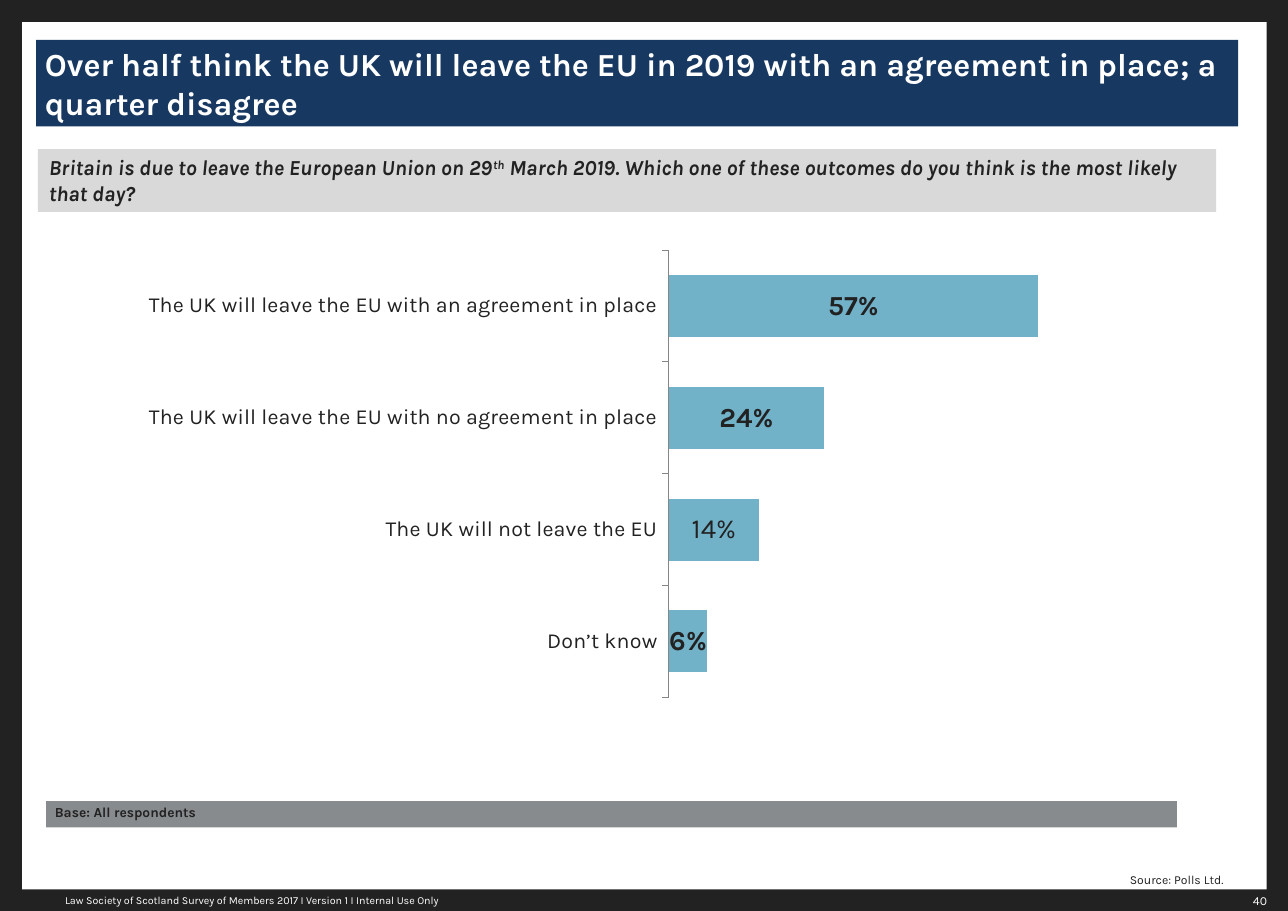
"""Build the survey slide on the expected outcome of leaving the EU."""
import pptx
import pptx.chart.data
import pptx.dml.color
import pptx.enum.chart
import pptx.enum.shapes
import pptx.enum.text
import pptx.oxml
import pptx.util

Pt = pptx.util.Pt
ANCHOR = pptx.enum.text.MSO_ANCHOR
ALIGN = pptx.enum.text.PP_ALIGN
FONT = "Karla"
COLORS = {
    "ink": "222223",
    "white": "FFFFFF",
    "navy": "173861",
    "question": "D9D9D9",
    "base": "888B8D",
    "bar": "71B2C9",
    "axis": "868686",
}


def style(font, size, color, bold=False, italic=False):
    font.name, font.size, font.bold, font.italic = FONT, Pt(size), bold, italic
    font.color.rgb = pptx.dml.color.RGBColor.from_string(COLORS[color])


def add_block(box, fill=None, texts=(), size=8, color="ink", bold=False, italic=False,
              insets=(0, 0), anchor=ANCHOR.TOP, align=ALIGN.LEFT, spacing=1.0, wrap=True):
    left, top, width, height = map(Pt, box)
    if fill:
        block = slide.shapes.add_shape(
            pptx.enum.shapes.MSO_SHAPE.RECTANGLE, left, top, width, height)
        block.shadow.inherit = False
        block.fill.solid()
        block.fill.fore_color.rgb = pptx.dml.color.RGBColor.from_string(COLORS[fill])
        block.line.fill.background()
    else:
        block = slide.shapes.add_textbox(left, top, width, height)
    frame = block.text_frame
    frame.word_wrap = wrap
    frame.vertical_anchor = anchor
    frame.margin_left = frame.margin_right = Pt(insets[0])
    frame.margin_top = frame.margin_bottom = Pt(insets[1])
    paragraph = frame.paragraphs[0]
    paragraph.alignment = align
    paragraph.line_spacing = spacing
    for text in texts:
        run = paragraph.add_run()
        run.text = text
        style(run.font, size, color, bold, italic)
    return paragraph


presentation = pptx.Presentation()
presentation.slide_width, presentation.slide_height = Pt(841.68), Pt(595.44)
slide = presentation.slides.add_slide(presentation.slide_layouts[6])
slide.background.fill.solid()
slide.background.fill.fore_color.rgb = pptx.dml.color.RGBColor.from_string(COLORS["ink"])

add_block((14.4, 14.4, 813.3, 567), "white")
add_block((788.4, 580.3, 45.4, 16.6), texts=["40"], color="white", insets=(5.76, 2.88),
          align=ALIGN.RIGHT, spacing=1.1)
add_block((42.5, 581, 385.2, 14.4),
          texts=["Law Society of Scotland Survey of Members 2017 I Version 1 I Internal Use Only"],
          size=7, color="white", anchor=ANCHOR.MIDDLE, wrap=False)
add_block((568, 565.2, 231.8, 14.4), texts=["Source: Polls Ltd."], anchor=ANCHOR.BOTTOM,
          align=ALIGN.RIGHT, spacing=1.1)
add_block((23.6, 26, 785.5, 56.6), "navy",
          ["Over half think the UK will leave the EU in 2019 with an agreement in place; "
           "a quarter disagree"],
          size=21, color="white", bold=True, insets=(5.76, 2.88), anchor=ANCHOR.BOTTOM)
question = add_block(
    (24.8, 97.4, 770, 41.2), "question",
    ["Britain is due to leave the European Union on 29", "th",
     " March 2019. Which one of these outcomes do you think is the most likely that day?"],
    size=14, bold=True, italic=True, insets=(7.2, 3.6))
question.runs[1].font._element.set("baseline", "30000")
add_block((30.1, 523.6, 739, 17.3), "base", ["Base: All respondents"], size=9, bold=True,
          insets=(5.76, 1), spacing=1.1)

outcomes = pptx.chart.data.CategoryChartData(number_format="0%")
outcomes.categories = [
    "Don’t know",
    "The UK will not leave the EU",
    "The UK will leave the EU with no agreement in place",
    "The UK will leave the EU with an agreement in place",
]
outcomes.add_series("Series 1", (0.06, 0.14, 0.24, 0.57))
chart = slide.shapes.add_chart(
    pptx.enum.chart.XL_CHART_TYPE.BAR_CLUSTERED,
    Pt(62.6), Pt(121.7), Pt(674.6), Pt(370.1), outcomes).chart
chart.has_legend = False
chart.has_title = False
style(chart.font, 18, "ink")

outcome_axis = chart.category_axis
outcome_axis.major_tick_mark = pptx.enum.chart.XL_TICK_MARK.OUTSIDE
outcome_axis.format.line.color.rgb = pptx.dml.color.RGBColor.from_string(COLORS["axis"])
outcome_axis.format.line.width = Pt(0.75)
style(outcome_axis.tick_labels.font, 14, "ink")
share_axis = chart.value_axis
share_axis.minimum_scale, share_axis.maximum_scale = 0, 0.6
share_axis.has_major_gridlines = False
share_axis.visible = False

plot = chart.plots[0]
plot.gap_width = 80
plot.vary_by_categories = False
shares = plot.series[0]
shares.format.fill.solid()
shares.format.fill.fore_color.rgb = pptx.dml.color.RGBColor.from_string(COLORS["bar"])
center = pptx.enum.chart.XL_LABEL_POSITION.CENTER
labels = shares.data_labels
labels.show_value = True
labels.position = center
labels.number_format, labels.number_format_is_linked = "0%", False
style(labels.font, 18, "ink", bold=True)
staying_label = shares.points[1].data_label
staying_run = staying_label.text_frame.paragraphs[0].add_run()
staying_run.text = "14%"
style(staying_run.font, 18, "ink")
staying_label.position = center

plot_area = chart._chartSpace.chart.plotArea
for old_layout in plot_area.findall(pptx.oxml.ns.qn("c:layout")):
    plot_area.remove(old_layout)
edges = "".join(f'<c:{side}Mode val="edge"/>' for side in "xy")
extents = "".join(f'<c:{side} val="{value}"/>' for side, value in
                  (("x", 0.555), ("y", 0.113), ("w", 0.377), ("h", 0.79)))
plot_area.insert(0, pptx.oxml.parse_xml(
    f'<c:layout {pptx.oxml.ns.nsdecls("c")}><c:manualLayout><c:layoutTarget val="inner"/>'
    f'{edges}{extents}</c:manualLayout></c:layout>'))

presentation.save("out.pptx")
